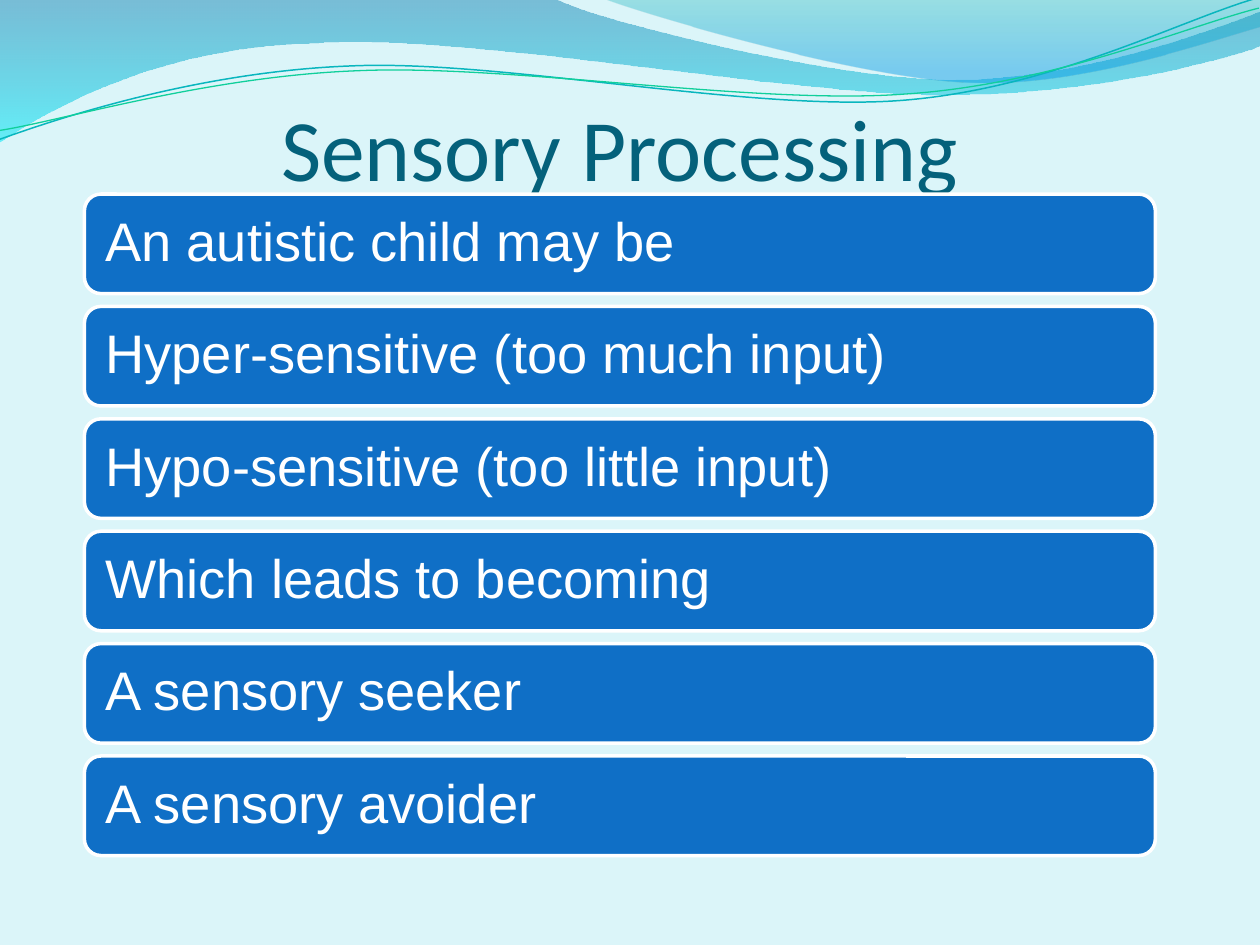
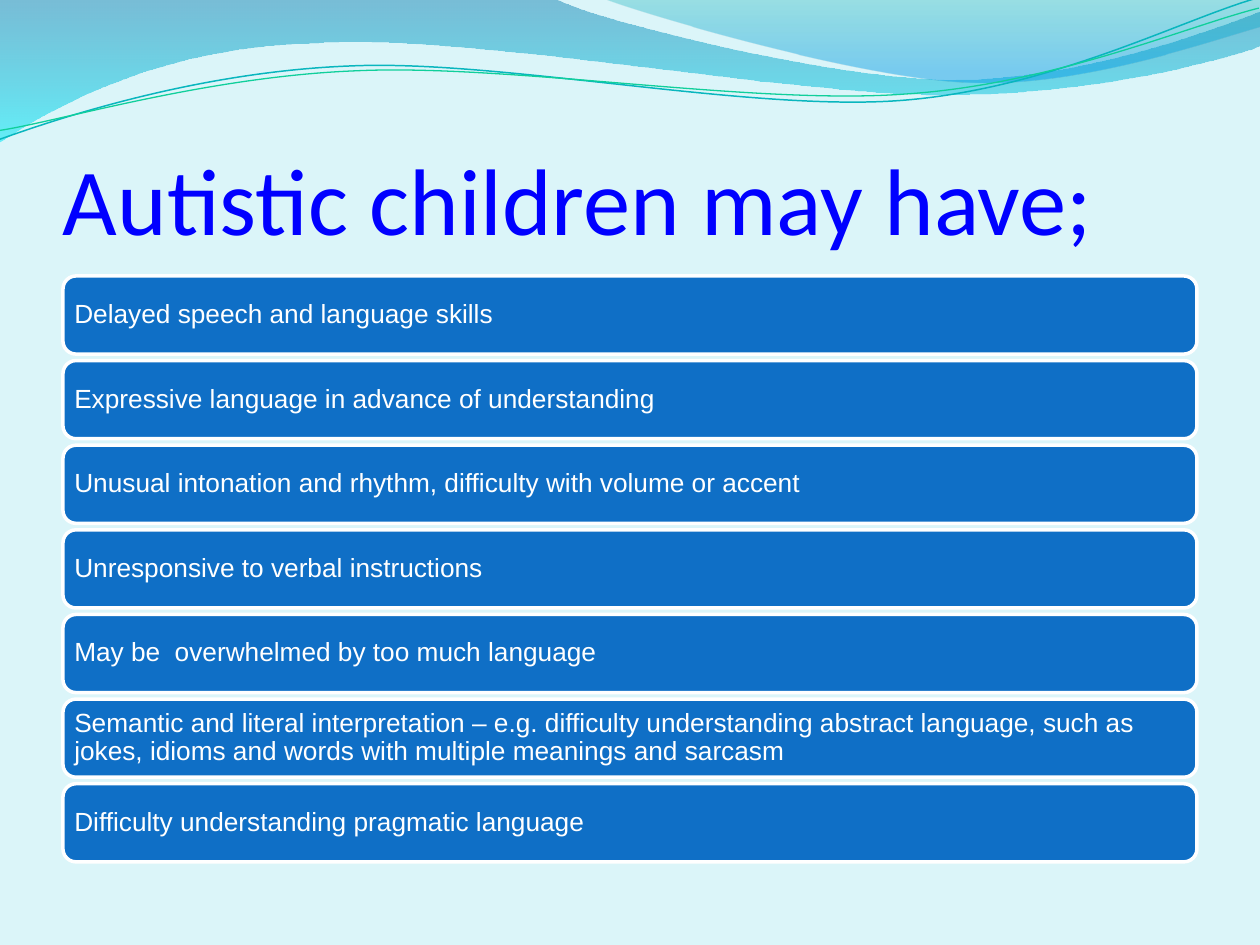
from dataclasses import dataclass
from typing import Optional

import pptx
import pptx.dml.color
import pptx.enum.shapes
import pptx.enum.text
import pptx.oxml
import pptx.oxml.ns
import pptx.shapes.autoshape
import pptx.slide
import pptx.text.text
import pptx.util

EMU_PER_PX = 9144  # 100 px to the inch

Point = tuple[int, int]
Align = pptx.enum.text.PP_ALIGN
Anchor = pptx.enum.text.MSO_ANCHOR


@dataclass(frozen=True)
class Theme:
    background: str = "DBF5F9"
    bar_fill: str = "0F6FC6"
    bar_text: str = "FFFFFF"
    teal_title: str = "04617B"
    blue_title: str = "0000FF"
    title_font: str = "Calibri"
    body_font: str = "Arial"
    title_size: int = 50
    large_title_size: int = 54
    body_size: int = 31
    small_body_size: int = 15
    bar_outline: float = 2
    bar_line_spacing: float = 0.9
    wave_line_tilt: float = 357.3


THEME = Theme()


@dataclass(frozen=True)
class GradientStop:
    position: float
    color: str
    opacity: int


@dataclass(frozen=True)
class Wave:
    """Each step holds one point (straight) or three points (cubic curve)."""
    start: Point
    steps: tuple[tuple[Point, ...], ...]
    gradient: tuple[GradientStop, ...] = ()
    line_color: Optional[str] = None
    line_width: float = 0


@dataclass(frozen=True)
class Title:
    text: str
    left: int
    top: int
    width: int
    height: int
    size: int
    color: str
    align: Align


@dataclass(frozen=True)
class BarStack:
    left: int
    top: int
    width: int
    bottom: int
    bar_height: int
    inset: int
    size: int
    labels: tuple[str, ...]


# Wave artwork shared by every slide; the lines are tilted after drawing
WAVES = (
    Wave((0, 0), (
        ((440, -1),),
        ((476, 17), (664, 63), (758, 63)),
        ((853, 63), (958, 26), (1000, 9)),
        ((1001, 36),),
        ((983, 44), (870, 76), (746, 75)),
        ((622, 75), (382, 28), (257, 34)),
        ((129, 36), (46, 83), (-1, 113)),
    ), gradient=(GradientStop(0, "0079AD", 45), GradientStop(1, "00E9F7", 55))),
    Wave((479, -1), (
        ((509, 11), (682, 62), (769, 65)),
        ((856, 69), (961, 32), (1000, 21)),
        ((1000, 0),),
    ), gradient=(GradientStop(0, "00ABB4", 30), GradientStop(0.8, "0099E4", 45))),
    Wave((-2, 87), (
        ((47, 72), (158, 41), (278, 42)),
        ((396, 42), (591, 93), (712, 90)),
        ((832, 87), (940, 36), (1000, 22)),
    ), line_color="09B6BE", line_width=0.85),
    Wave((-2, 80), (
        ((46, 75), (164, 45), (283, 46)),
        ((404, 46), (596, 88), (716, 85)),
        ((835, 83), (942, 42), (1001, 30)),
    ), line_color="10CF9B", line_width=0.75),
)

# Slide content
SLIDES = (
    (
        Title("Sensory Processing", 67, 33, 850, 125,
              THEME.title_size, THEME.teal_title, Align.CENTER),
        BarStack(67, 154, 850, 679, 79, 13, THEME.body_size, (
            "An autistic child may be",
            "Hyper-sensitive (too much input)",
            "Hypo-sensitive (too little input)",
            "Which leads to becoming",
            "A sensory seeker",
            "A sensory avoider",
        )),
    ),
    (
        Title("Autistic children may have;", 50, 77, 900, 125,
              THEME.large_title_size, THEME.blue_title, Align.LEFT),
        BarStack(50, 219, 900, 684, 62, 6, THEME.small_body_size, (
            "Delayed speech and language skills",
            "Expressive language in advance of understanding",
            "Unusual intonation and rhythm, difficulty with volume or accent",
            "Unresponsive to verbal instructions",
            "May be  overwhelmed by too much language",
            "Semantic and literal interpretation – e.g. difficulty understanding "
            "abstract language, such as jokes, idioms and words with multiple "
            "meanings and sarcasm",
            "Difficulty understanding pragmatic language",
        )),
    ),
)


def px(length: float) -> pptx.util.Emu:
    return pptx.util.Emu(round(length * EMU_PER_PX))


def rgb(color: str) -> pptx.dml.color.RGBColor:
    return pptx.dml.color.RGBColor.from_string(color)


def drawing_element(tag: str, attributes: str = ""):
    return pptx.oxml.parse_xml(
        f'<a:{tag} {pptx.oxml.ns.nsdecls("a")} {attributes}/>')


# Text
def write_text(text_frame: pptx.text.text.TextFrame, text: str, font_name: str,
               size: int, color: str, align: Align, anchor: Anchor,
               insets: tuple[int, int, int, int]) -> None:
    text_frame.text = text
    text_frame.word_wrap = True
    text_frame.vertical_anchor = anchor
    (text_frame.margin_left, text_frame.margin_top,
     text_frame.margin_right, text_frame.margin_bottom) = map(px, insets)
    paragraph = text_frame.paragraphs[0]
    paragraph.alignment = align
    font = paragraph.runs[0].font
    font.name = font_name
    font.size = pptx.util.Pt(size)
    font.color.rgb = rgb(color)


# Waves
def bend_curves(shape: pptx.shapes.autoshape.Shape,
                steps: tuple[tuple[Point, ...], ...]) -> None:
    """Join the three straight segments of each curved step into one curve."""
    segments = iter(list(shape.element.spPr.iter(pptx.oxml.ns.qn("a:lnTo"))))
    for step in steps:
        parts = [next(segments) for _ in step]
        if len(parts) == 3:
            curve = drawing_element("cubicBezTo")
            parts[0].addprevious(curve)
            for part in parts:
                curve.append(part[0])
                part.getparent().remove(part)


def fill_gradient(shape: pptx.shapes.autoshape.Shape,
                  gradient: tuple[GradientStop, ...]) -> None:
    shape.fill.gradient()
    shape.fill.gradient_angle = 270  # top to bottom
    for stop, wanted in zip(shape.fill.gradient_stops, gradient):
        stop.position = wanted.position
        stop.color.rgb = rgb(wanted.color)
    color_tag = pptx.oxml.ns.qn("a:srgbClr")
    for element, wanted in zip(shape.element.spPr.iter(color_tag), gradient):
        element.append(drawing_element("alpha", f'val="{wanted.opacity * 1000}"'))


def draw_wave(slide: pptx.slide.Slide, wave: Wave) -> None:
    points = [(px(x), px(y)) for step in wave.steps for x, y in step]
    builder = slide.shapes.build_freeform(px(wave.start[0]), px(wave.start[1]))
    builder.add_line_segments(points, close=bool(wave.gradient))
    shape = builder.convert_to_shape()
    bend_curves(shape, wave.steps)
    shape.shadow.inherit = False
    if wave.gradient:
        fill_gradient(shape, wave.gradient)
        shape.line.fill.background()
    else:
        shape.rotation = THEME.wave_line_tilt
        shape.fill.background()
        shape.line.color.rgb = rgb(wave.line_color)
        shape.line.width = pptx.util.Pt(wave.line_width)


# Title and bars
def draw_title(slide: pptx.slide.Slide, title: Title) -> None:
    box = slide.shapes.add_textbox(
        px(title.left), px(title.top), px(title.width), px(title.height))
    write_text(box.text_frame, title.text, THEME.title_font, title.size,
               title.color, title.align, Anchor.BOTTOM, (0, 5, 0, 0))


def draw_bars(slide: pptx.slide.Slide, stack: BarStack) -> None:
    last_top = stack.bottom - stack.bar_height
    pitch = (last_top - stack.top) / (len(stack.labels) - 1)
    for index, label in enumerate(stack.labels):
        bar = slide.shapes.add_shape(
            pptx.enum.shapes.MSO_SHAPE.ROUNDED_RECTANGLE,
            px(stack.left), px(stack.top + index * pitch),
            px(stack.width), px(stack.bar_height))
        bar.shadow.inherit = False
        bar.fill.solid()
        bar.fill.fore_color.rgb = rgb(THEME.bar_fill)
        bar.line.color.rgb = rgb(THEME.bar_text)
        bar.line.width = pptx.util.Pt(THEME.bar_outline)
        write_text(bar.text_frame, label, THEME.body_font, stack.size,
                   THEME.bar_text, Align.LEFT, Anchor.MIDDLE, (stack.inset,) * 4)
        bar.text_frame.paragraphs[0].line_spacing = THEME.bar_line_spacing


def main() -> None:
    presentation = pptx.Presentation()
    presentation.slide_width = px(1000)
    presentation.slide_height = px(750)
    blank_layout = presentation.slide_layouts[6]
    for title, stack in SLIDES:
        slide = presentation.slides.add_slide(blank_layout)
        slide.background.fill.solid()
        slide.background.fill.fore_color.rgb = rgb(THEME.background)
        for wave in WAVES:
            draw_wave(slide, wave)
        draw_title(slide, title)
        draw_bars(slide, stack)
    presentation.save("out.pptx")


if __name__ == "__main__":
    main()
